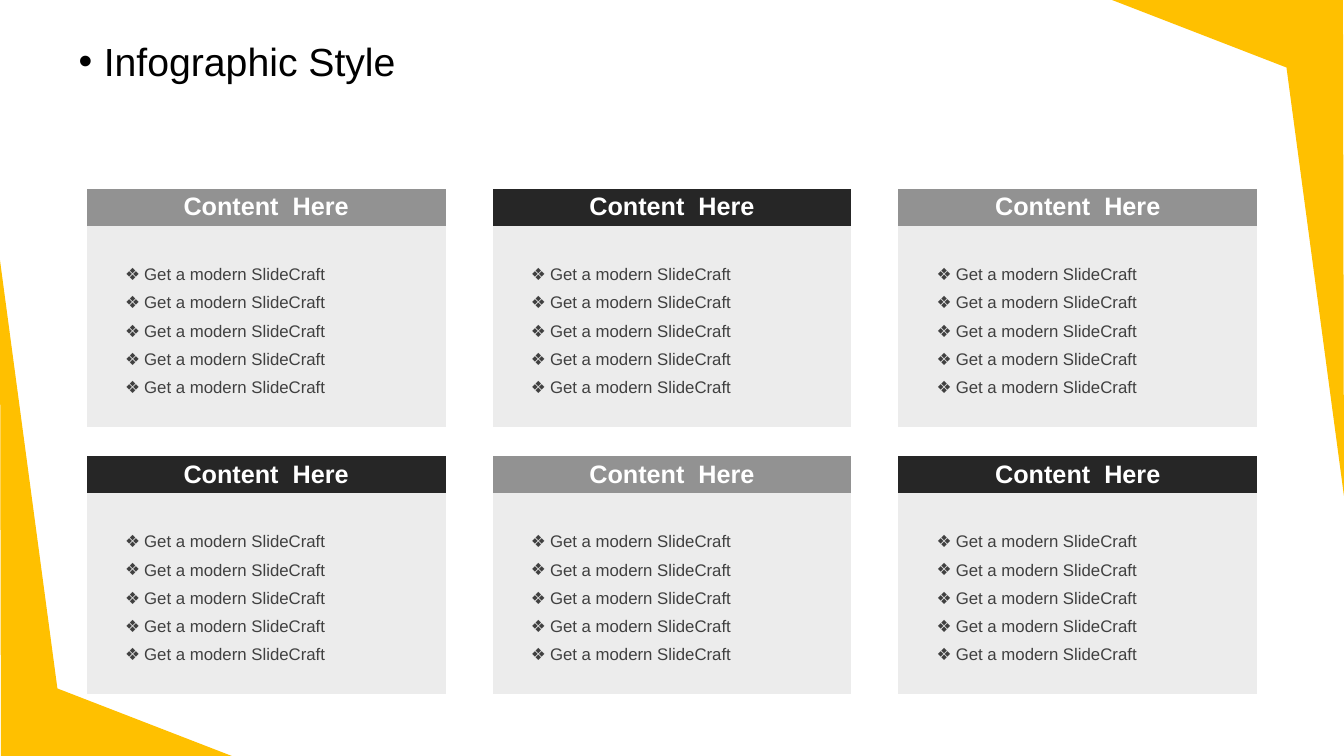
from lxml.etree import SubElement
from pptx import Presentation
from pptx.dml.color import RGBColor
from pptx.enum.text import MSO_ANCHOR as Anchor, PP_ALIGN as Align
from pptx.oxml.ns import qn
from pptx.util import Inches, Pt

SLIDE_W, SLIDE_H = 13.33, 7.5
AMBER = RGBColor(0xFF, 0xC0, 0x00)
BLACK = RGBColor(0x00, 0x00, 0x00)
WHITE = RGBColor(0xFF, 0xFF, 0xFF)
GREY = RGBColor(0x92, 0x92, 0x92)
CHARCOAL = RGBColor(0x26, 0x26, 0x26)
PALE = RGBColor(0xEC, 0xEC, 0xEC)
INK = RGBColor(0x40, 0x40, 0x40)

NO_GRID_STYLE = "{2D5ABB26-0587-4C30-8999-92F81FD0307C}"
GRID_LEFT, GRID_TOP = 0.86, 1.87
GRID_COLS, GRID_ROWS = 3, 2
COL_STEP, ROW_STEP = (8.91 - GRID_LEFT) / 2, 2.65
PANEL_COLS = (0.28, 3, 0.28)
PANEL_ROWS = (0.37, 0.5, 0.5, 0.5, 0.5)
CORNER = ((0.01, 7.5), (0, 2.58), (0.57, 6.83), (2.3, 7.5))

HEADING_FONT = {"name": "Arial", "size": Pt(28), "bold": False}
BANNER_FONT = {"name": "Arial", "size": Pt(18), "bold": True}
POINT_FONT = {"name": "Arial", "size": Pt(12), "bold": False}


def apply(target, values):
    for key, value in values.items():
        setattr(target, key, value)


def write(paragraph, text, font, color, layout):
    run = paragraph.add_run()
    run.text = text
    apply(run.font, font)
    run.font.color.rgb = color
    apply(paragraph, layout)


def add_bullet(paragraph, char, indent):
    props = paragraph._p.get_or_add_pPr()
    props.set("marL", str(Inches(indent)))
    props.set("indent", str(-Inches(indent)))
    SubElement(props, qn("a:buFont")).set("typeface", "Arial")
    SubElement(props, qn("a:buChar")).set("char", char)


def add_corner(slide, points):
    start, *rest = [(Inches(x), Inches(y)) for x, y in points]
    outline = slide.shapes.build_freeform(*start)
    outline.add_line_segments(rest, close=True)
    corner = outline.convert_to_shape()
    corner.fill.solid()
    corner.fill.fore_color.rgb = AMBER
    corner.line.fill.background()
    corner.shadow.inherit = False


def set_heading(slide, text):
    title, heading = slide.placeholders
    title.element.getparent().remove(title.element)
    apply(heading, {"left": Inches(0.68), "top": Inches(0.37),
                    "width": Inches(12.66), "height": Inches(0.79)})
    heading.text_frame.vertical_anchor = Anchor.TOP
    line = heading.text_frame.paragraphs[0]
    write(line, text, HEADING_FONT, BLACK,
          {"alignment": Align.LEFT, "line_spacing": 0.9, "space_before": Pt(10)})
    add_bullet(line, "•", 0.25)


def add_panel(slide, left, top, banner_color, banner_text, points):
    frame = slide.shapes.add_table(
        len(PANEL_ROWS), len(PANEL_COLS), Inches(left), Inches(top),
        Inches(sum(PANEL_COLS)), Inches(sum(PANEL_ROWS)))
    panel = frame.table
    apply(panel, {"first_row": False, "horz_banding": False})
    panel._tbl.tblPr.find(qn("a:tableStyleId")).text = NO_GRID_STYLE
    for column, width in zip(panel.columns, PANEL_COLS):
        column.width = Inches(width)
    for index, height in enumerate(PANEL_ROWS):
        panel.rows[index].height = Inches(height)
        for cell in panel.rows[index].cells:
            cell.fill.solid()
            cell.fill.fore_color.rgb = PALE if index else banner_color

    banner, body = panel.cell(0, 0), panel.cell(1, 1)
    banner.merge(panel.cell(0, 2))
    body.merge(panel.cell(4, 1))
    apply(banner, {"vertical_anchor": Anchor.MIDDLE,
                   "margin_top": Inches(0.04), "margin_bottom": Inches(0.04)})
    body.vertical_anchor = Anchor.MIDDLE
    write(banner.text_frame.paragraphs[0], banner_text, BANNER_FONT, WHITE,
          {"alignment": Align.CENTER})
    for index, point in enumerate(points):
        text = body.text_frame
        line = text.add_paragraph() if index else text.paragraphs[0]
        write(line, point, POINT_FONT, INK, {"line_spacing": 1.5})
        add_bullet(line, "❖", 0.19)


def main():
    deck = Presentation()
    apply(deck, {"slide_width": Inches(SLIDE_W), "slide_height": Inches(SLIDE_H)})
    slide = deck.slides.add_slide(deck.slide_layouts.get_by_name("Section Header"))
    set_heading(slide, "Infographic Style")
    add_corner(slide, CORNER)
    add_corner(slide, [(SLIDE_W - x, SLIDE_H - y) for x, y in CORNER])
    for row in range(GRID_ROWS):
        for col in range(GRID_COLS):
            add_panel(slide, GRID_LEFT + col * COL_STEP, GRID_TOP + row * ROW_STEP,
                      (GREY, CHARCOAL)[(row + col) % 2], "Content  Here",
                      ["Get a modern SlideCraft"] * 5)
    deck.save("out.pptx")


if __name__ == "__main__":
    main()
